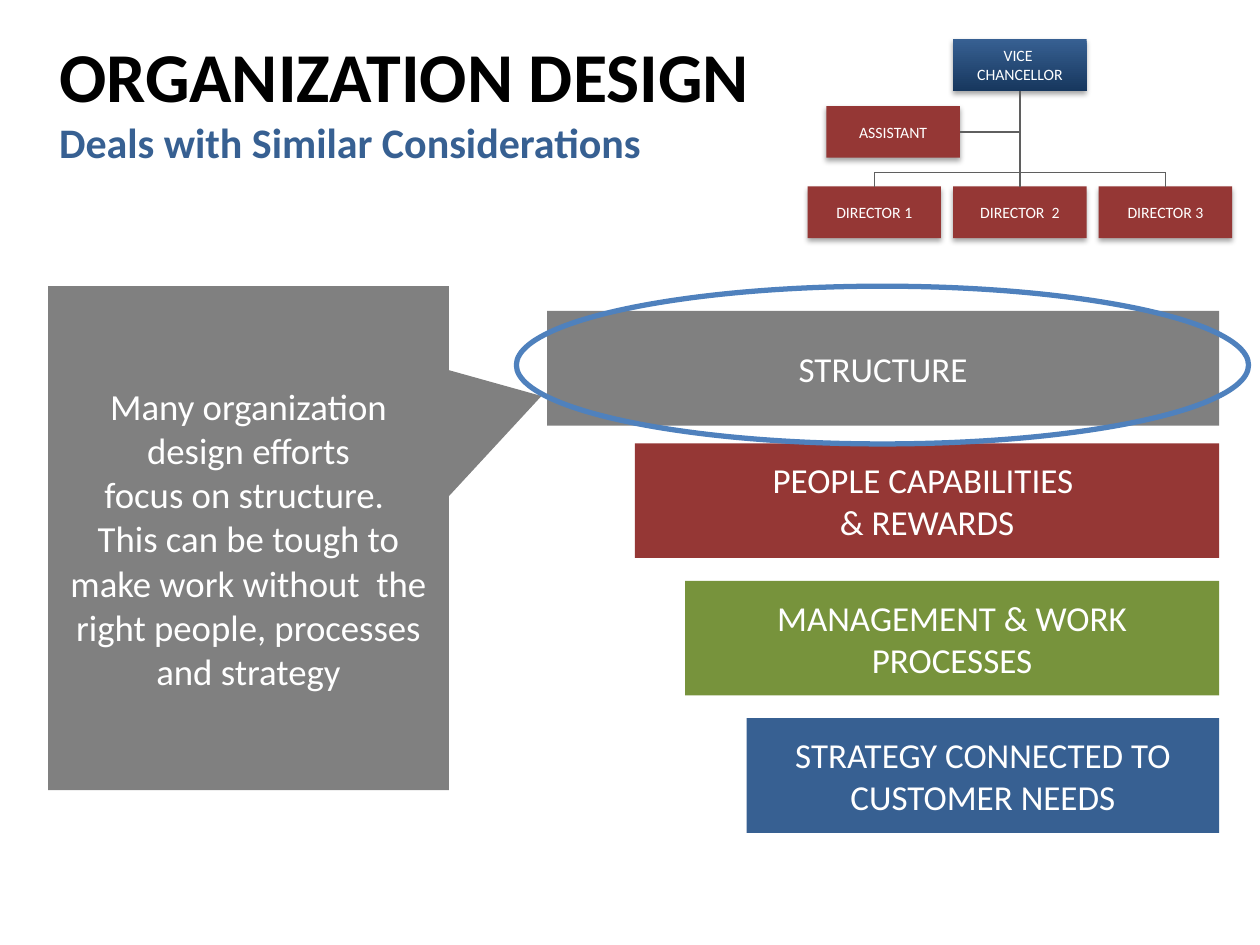
from lxml import etree
from pptx import Presentation
from pptx import util as u
from pptx.dml.color import RGBColor
from pptx.enum import shapes, text
from pptx.oxml.ns import qn

FONT = "Calibri"
BLUE, NAVY, RED, GREEN, GREY = "376092", "17375E", "953735", "77933C", "808080"
WHITE, BLACK, OUTLINE, LINK = "FFFFFF", "000000", "4F81BD", "5F5F5F"
NO_INSETS = {f"margin_{side}": 0 for side in ("left", "top", "right", "bottom")}


def rgb(value):
    return RGBColor.from_string(value)


def set_attributes(target, values):
    for name, value in values.items():
        setattr(target, name, value)


def format_font(font, size, color, bold=False):
    set_attributes(font, {"name": FONT, "size": u.Pt(size), "bold": bold})
    font.color.rgb = rgb(color)


def add_filled(slide, preset, box, color, words, size, frame_format=None):
    """Add a borderless shape with centred white text; box is in cm."""
    shape = slide.shapes.add_shape(preset, *map(u.Cm, box))
    shape.shadow.inherit = False
    shape.fill.solid()
    shape.fill.fore_color.rgb = rgb(color)
    shape.line.fill.background()
    frame = shape.text_frame
    frame.text = words
    set_attributes(frame, {"word_wrap": True, "vertical_anchor": text.MSO_ANCHOR.MIDDLE,
                           **(frame_format or {})})
    for paragraph in frame.paragraphs:
        paragraph.alignment = text.PP_ALIGN.CENTER
        format_font(paragraph.font, size, WHITE)
        for run in paragraph.runs:
            format_font(run.font, size, WHITE)
    return shape


def add_drop_shadow(shape):
    effects = shape._element.spPr.find(qn("a:effectLst"))
    shadow = etree.SubElement(effects, qn("a:outerShdw"), blurRad=str(u.Pt(3.1)),
                              dist=str(u.Pt(1.8)), dir="5400000", rotWithShape="0")
    color = etree.SubElement(shadow, qn("a:srgbClr"), val=BLACK)
    etree.SubElement(color, qn("a:alpha"), val="35000")


def add_link(slide, start, finish, begin=None, end=None):
    """Add a straight line; begin and end are (shape, side) pairs to join."""
    link = slide.shapes.add_connector(shapes.MSO_CONNECTOR.STRAIGHT,
                                      *map(u.Cm, (*start, *finish)))
    if begin:
        link.begin_connect(*begin)
    if end:
        link.end_connect(*end)
    link.line.color.rgb = rgb(LINK)
    link.line.width = u.Pt(0.75)
    etree.SubElement(link._element.spPr, qn("a:effectLst"))


def fill_title(slide, left, top, width, height):
    title = slide.shapes.title
    set_attributes(title, {"left": u.Cm(left), "top": u.Cm(top),
                           "width": u.Cm(width), "height": u.Cm(height)})
    frame = title.text_frame
    set_attributes(frame, {**NO_INSETS, "word_wrap": True,
                           "auto_size": text.MSO_AUTO_SIZE.NONE,
                           "vertical_anchor": text.MSO_ANCHOR.MIDDLE})
    paragraph = frame.paragraphs[0]
    paragraph.alignment = text.PP_ALIGN.LEFT
    heading = paragraph.add_run()
    heading.text = "ORGANIZATION DESIGN "
    format_font(heading.font, 40, BLACK, bold=True)
    paragraph.add_line_break()
    subtitle = paragraph.add_run()
    subtitle.text = "Deals with Similar Considerations"
    format_font(subtitle.font, 24, BLUE, bold=True)


def add_org_chart(slide, left, top, width, height):
    box_width, box_height = 2.69, 1.04
    pitch = (width - box_width) / 2
    director_top = top + height - box_height
    bus = director_top - 0.28
    center = left + width / 2

    def add_position(x, y, words):
        box = add_filled(slide, shapes.MSO_SHAPE.RECTANGLE, (x, y, box_width, box_height),
                         RED, words, 9, NO_INSETS)
        add_drop_shadow(box)
        return box

    chief = add_position(left + pitch, top, "VICE \vCHANCELLOR")
    chief.fill.gradient()
    chief.fill.gradient_angle = 270
    for stop, color in zip(chief.fill.gradient_stops, (BLUE, NAVY)):
        stop.color.rgb = rgb(color)
    for position, stop in enumerate(chief.fill.gradient_stops):
        stop.position = position

    assistant_left, assistant_top = left + 0.38, top + 1.35
    assistant = add_position(assistant_left, assistant_top, "ASSISTANT")
    assistant_middle = assistant_top + box_height / 2
    add_link(slide, (assistant_left + box_width, assistant_middle),
             (center, assistant_middle), begin=(assistant, 3))

    for column, words in enumerate(("DIRECTOR 1", "DIRECTOR  2", "DIRECTOR 3")):
        x = left + column * pitch
        director = add_position(x, director_top, words)
        middle = x + box_width / 2
        is_central = column == 1
        add_link(slide, (middle, top + box_height if is_central else bus),
                 (middle, director_top),
                 begin=(chief, 2) if is_central else None, end=(director, 0))
    add_link(slide, (center - pitch, bus), (center + pitch, bus))


def add_callout(slide, left, top, width, height):
    callout = add_filled(slide, shapes.MSO_SHAPE.RECTANGULAR_CALLOUT,
                         (left, top, width, height), GREY,
                         "Many organization design efforts\vfocus on structure. \n"
                         "This can be tough to make work without  the right people, "
                         "processes and strategy", 21)
    callout.adjustments[0], callout.adjustments[1] = 0.731, -0.282


def add_design_layers(slide, left, top, width, height):
    """Stack right-aligned bars, each (indent, drop, colour, words)."""
    bar_height = 2.31
    pitch = (height - bar_height) / 3
    layers = (
        (0, 0.1, GREY, "STRUCTURE"),
        (1.77, 0, RED, "PEOPLE CAPABILITIES \v& REWARDS"),
        (2.78, 0, GREEN, "MANAGEMENT & WORK PROCESSES"),
        (4.02, 0, BLUE, "STRATEGY CONNECTED TO CUSTOMER NEEDS"),
    )
    for row, (indent, drop, color, words) in enumerate(layers):
        add_filled(slide, shapes.MSO_SHAPE.RECTANGLE,
                   (left + indent, top + row * pitch + drop, width - indent, bar_height),
                   color, words, 20)


def add_highlight(slide, left, top, width, height):
    ring = slide.shapes.add_shape(shapes.MSO_SHAPE.OVAL,
                                  *map(u.Cm, (left, top, width, height)))
    ring.shadow.inherit = False
    ring.fill.background()
    ring.line.color.rgb = rgb(OUTLINE)
    ring.line.width = u.Pt(3)


def main():
    presentation = Presentation()
    presentation.slide_width = u.Cm(25.4)
    presentation.slide_height = u.Cm(19.05)
    slide = presentation.slides.add_slide(presentation.slide_layouts[5])
    fill_title(slide, 1.19, 0.48, 22.86, 3.07)
    add_design_layers(slide, 11.03, 6.17, 13.55, 10.62)
    add_callout(slide, 0.97, 5.77, 8.08, 10.16)
    add_highlight(slide, 10.41, 5.77, 14.76, 3.18)
    add_org_chart(slide, 16.28, 0.79, 8.56, 4.01)
    presentation.save("out.pptx")


if __name__ == "__main__":
    main()
